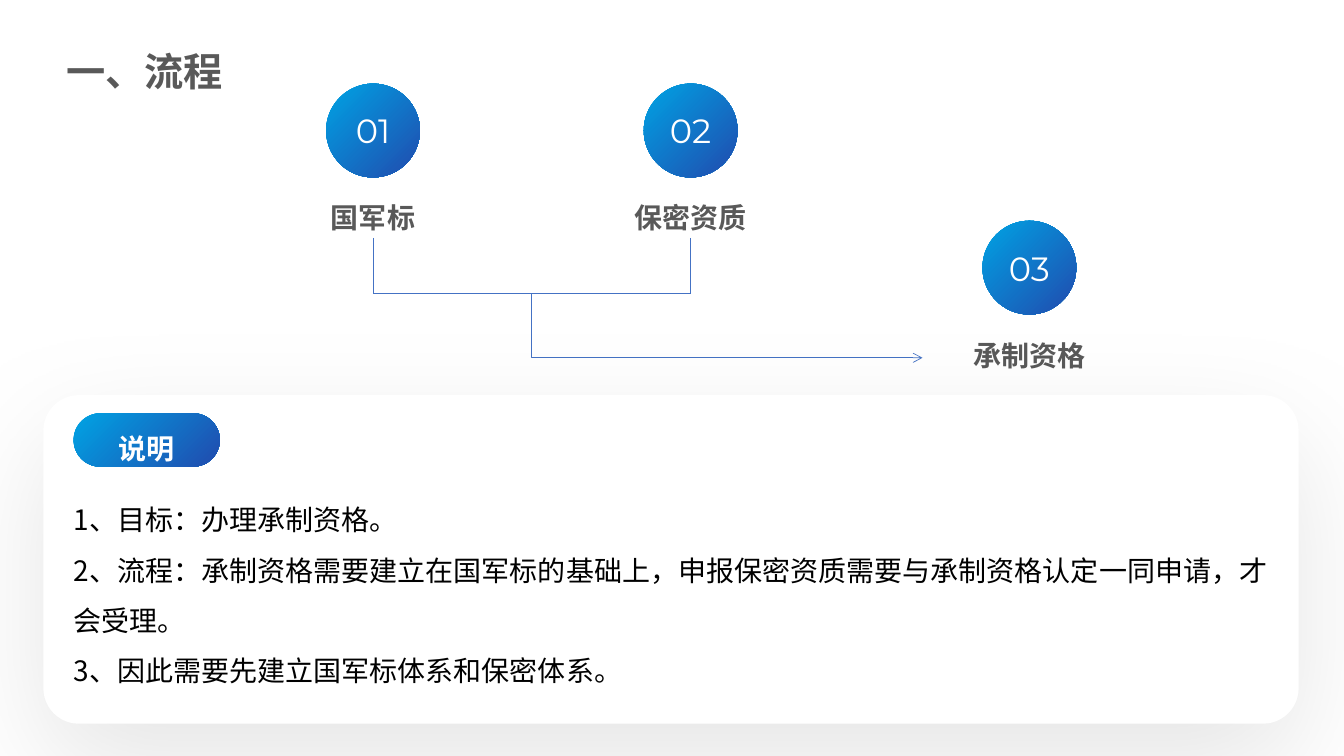
from dataclasses import dataclass

from lxml.etree import SubElement
from pptx import Presentation
from pptx.dml.color import RGBColor
from pptx.enum.shapes import MSO_CONNECTOR, MSO_SHAPE
from pptx.enum.text import MSO_ANCHOR, MSO_AUTO_SIZE, PP_ALIGN
from pptx.oxml.ns import qn
from pptx.util import Inches, Pt


@dataclass(frozen=True)
class Theme:
    chinese_font: str = "Noto Sans CJK SC"
    number_font: str = "Montserrat"
    white: str = "FFFFFF"
    black: str = "000000"
    heading: str = "595959"
    line: str = "4472C4"
    gradient: tuple = ("00A3E4", "214BAE")
    title_size: int = 28
    number_size: int = 24
    body_size: int = 20
    line_width: float = 0.5


class FlowSlide:
    def __init__(self, slide, theme):
        self.slide = slide
        self.theme = theme
        background = slide.background.fill
        background.solid()
        background.fore_color.rgb = RGBColor.from_string(theme.white)

    def set_text(self, shape, paragraphs, size, color, font=None, bold=False,
                 align=PP_ALIGN.LEFT, spacing=None):
        font = font or self.theme.chinese_font
        frame = shape.text_frame
        frame.text = "\n".join(paragraphs)
        for paragraph in frame.paragraphs:
            paragraph.alignment = align
            paragraph.line_spacing = spacing
            paragraph.font.size = Pt(size)
            paragraph.font.bold = bold
            paragraph.font.color.rgb = RGBColor.from_string(color)
            paragraph.font.name = font
            properties = paragraph._p.pPr.find(qn("a:defRPr"))
            SubElement(properties, qn("a:ea"), typeface=font)

    def text(self, box, paragraphs, size, color, wrap=True, inset=True, shapes=None, **style):
        shapes = shapes or self.slide.shapes
        shape = shapes.add_textbox(*map(Inches, box))
        frame = shape.text_frame
        frame.word_wrap = wrap
        frame.auto_size = MSO_AUTO_SIZE.SHAPE_TO_FIT_TEXT
        if not inset:
            frame.margin_left = frame.margin_right = 0
            frame.margin_top = frame.margin_bottom = 0
        self.set_text(shape, paragraphs, size, color, **style)

    def shape(self, kind, box, shapes):
        shape = shapes.add_shape(kind, *map(Inches, box))
        shape.shadow.inherit = False
        shape.line.fill.background()
        return shape

    def badge(self, kind, box, label, size, shapes, **style):
        """Add a gradient shape with a centred white label."""
        shape = self.shape(kind, box, shapes)
        shape.fill.gradient()
        shape.fill.gradient_angle = 315
        for stop, color in zip(shape.fill.gradient_stops, self.theme.gradient):
            stop.color.rgb = RGBColor.from_string(color)
        shape.text_frame.vertical_anchor = MSO_ANCHOR.MIDDLE
        self.set_text(shape, [label], size, self.theme.white, align=PP_ALIGN.CENTER, **style)
        return shape

    def step(self, number, name, center, top):
        """Add a numbered circle with its name below, centred on one axis."""
        theme = self.theme
        shapes = self.slide.shapes.add_group_shape().shapes
        diameter = 0.93
        self.badge(MSO_SHAPE.OVAL, (center - diameter / 2, top, diameter, diameter),
                   f"{number:02}", theme.number_size, shapes, font=theme.number_font)
        width = 0.2 + 0.28 * len(name)
        self.text((center - width / 2, top + 1.17, width, 0.38), [name], theme.body_size,
                  theme.heading, wrap=False, shapes=shapes, bold=True,
                  align=PP_ALIGN.CENTER, spacing=Pt(20))

    def connector(self, start, end, kind=MSO_CONNECTOR.STRAIGHT):
        connector = self.slide.shapes.add_connector(kind, *map(Inches, start + end))
        connector.line.color.rgb = RGBColor.from_string(self.theme.line)
        connector.line.width = Pt(self.theme.line_width)
        SubElement(connector._element.spPr, qn("a:effectLst"))
        return connector

    def elbow_arrow(self, start, end, bend):
        """Add an elbow arrow that turns at the given share of its width."""
        connector = self.connector(start, end, MSO_CONNECTOR.ELBOW)
        properties = connector._element.spPr
        SubElement(properties.find(qn("a:ln")), qn("a:tailEnd"), type="arrow")
        adjustments = properties.find(qn("a:prstGeom")).find(qn("a:avLst"))
        SubElement(adjustments, qn("a:gd"), name="adj1", fmla=f"val {round(bend * 100000)}")

    def panel(self, box, shapes):
        """Add a white rounded panel with a soft shadow below."""
        shape = self.shape(MSO_SHAPE.ROUNDED_RECTANGLE, box, shapes)
        shape.adjustments[0] = 0.108
        shape.fill.solid()
        shape.fill.fore_color.rgb = RGBColor.from_string(self.theme.white)
        effects = shape._element.spPr.find(qn("a:effectLst"))
        shadow = SubElement(effects, qn("a:outerShdw"), blurRad=str(Pt(90)),
                            dist=str(Pt(30)), dir="5400000", algn="t", rotWithShape="0")
        color = SubElement(shadow, qn("a:srgbClr"), val=self.theme.black)
        SubElement(color, qn("a:alpha"), val="10000")

    def explanation(self, heading, paragraphs):
        theme = self.theme
        shapes = self.slide.shapes.add_group_shape().shapes
        self.panel((0.43, 3.92, 12.45, 3.26), shapes)
        self.text((0.73, 4.82, 11.91, 2.02), paragraphs, theme.body_size, theme.black,
                  inset=False, shapes=shapes, spacing=1.5)
        pill = self.badge(MSO_SHAPE.ROUNDED_RECTANGLE, (0.73, 4.1, 1.45, 0.53), heading,
                          theme.body_size, shapes, bold=True, spacing=1.5)
        pill.adjustments[0] = 0.5


def main():
    presentation = Presentation()
    presentation.slide_width = Inches(13.33)
    presentation.slide_height = Inches(7.5)
    theme = Theme()
    flow = FlowSlide(presentation.slides.add_slide(presentation.slide_layouts[6]), theme)

    flow.text((0.56, 0.42, 2.56, 0.57), ["一、流程"], theme.title_size, theme.heading, bold=True)

    first, second, third = 3.7, 6.85, 10.21
    steps = [("国军标", first, 0.83), ("保密资质", second, 0.83), ("承制资格", third, 2.19)]
    for number, (name, center, top) in enumerate(steps, 1):
        flow.step(number, name, center, top)

    label_bottom, junction = 2.36, 2.91
    for center in (first, second):
        flow.connector((center, label_bottom), (center, junction))
    flow.connector((first, junction), (second, junction))
    flow.elbow_arrow((5.02, junction), (9.15, 3.55), bend=0.06)

    flow.explanation("说明", [
        "1、目标：办理承制资格。",
        "2、流程：承制资格需要建立在国军标的基础上，申报保密资质需要与承制资格认定一同申请，才会受理。",
        "3、因此需要先建立国军标体系和保密体系。",
    ])
    presentation.save("out.pptx")


if __name__ == "__main__":
    main()
